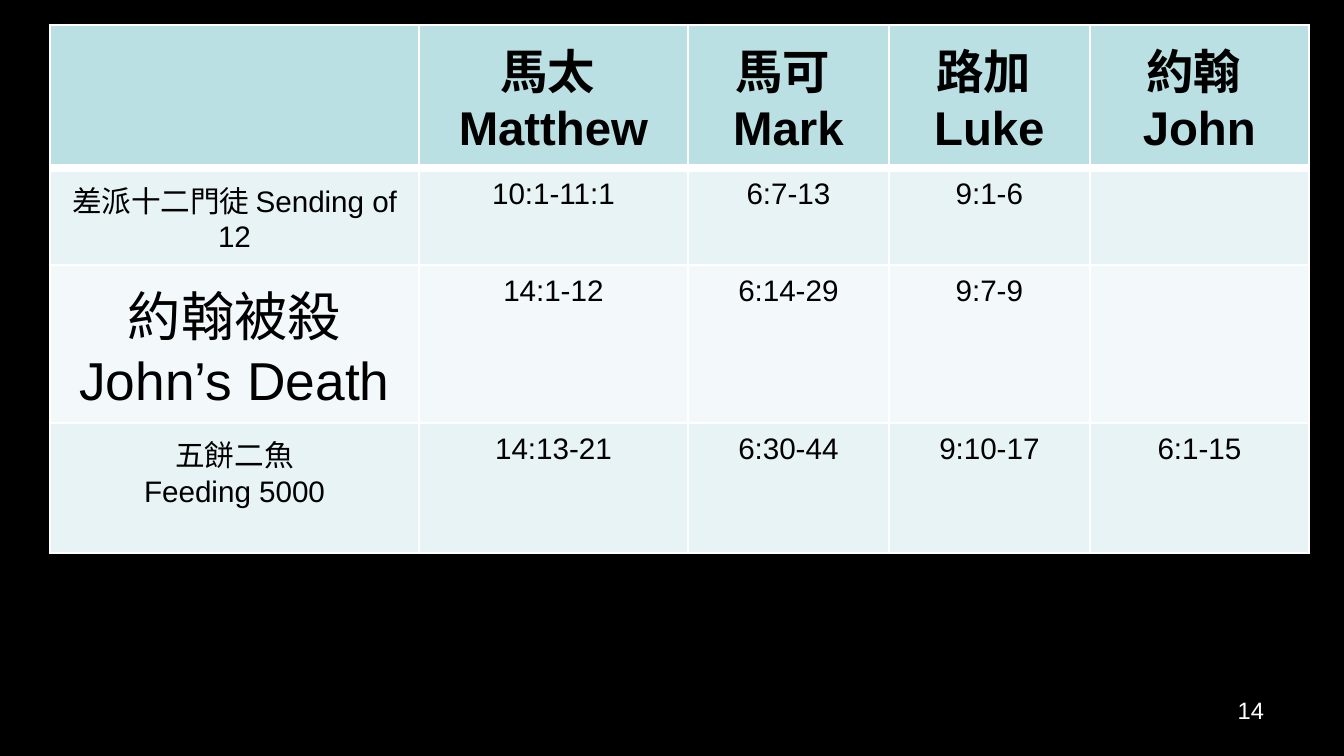
from dataclasses import dataclass

from lxml.etree import SubElement
from pptx import Presentation
from pptx.dml.color import RGBColor
from pptx.enum.text import PP_ALIGN
from pptx.oxml.ns import qn
from pptx.util import Emu, Pt

PX = 4286.25  # EMU in one px


@dataclass(frozen=True)
class Theme:
    background: str = "000000"
    header_fill: str = "BBE0E3"
    odd_fill: str = "E7F3F4"
    even_fill: str = "F3F9FA"
    rule: str = "FFFFFF"
    ink: str = "000000"
    page_ink: str = "FFFFFF"
    chinese_font: str = "Calibri"
    english_font: str = "Arial"
    header_size: int = 16
    focus_size: int = 18
    body_size: int = 10
    page_size: int = 8


THEME = Theme()

COLUMN_WIDTHS = [369, 269, 201, 201, 219]
ROW_HEIGHTS = [143, 97, 158, 130]
GOSPELS = [("馬太 ", "Matthew"), ("馬可 ", "Mark"), ("路加 ", "Luke"), ("約翰 ", "John")]
# Chinese title, English title, what joins them, type size, verses by gospel
EVENTS = [
    ("差派十二門徒 ", "Sending of 12", "run", THEME.body_size,
     ["10:1-11:1", "6:7-13", "9:1-6", ""]),
    ("約翰被殺", "John’s Death", "paragraph", THEME.focus_size,
     ["14:1-12", "6:14-29", "9:7-9", ""]),
    ("五餅二魚", "Feeding 5000", "paragraph", THEME.body_size,
     ["14:13-21", "6:30-44", "9:10-17", "6:1-15"]),
]


def px(length):
    return Emu(round(length * PX))


def rgb(colour):
    return RGBColor.from_string(colour)


def add_run(paragraph, text, font, size, colour=THEME.ink, bold=False):
    run = paragraph.add_run()
    run.text = text
    run.font.name = font
    run.font.size = Pt(size)
    run.font.bold = bold
    run.font.color.rgb = rgb(colour)


def write_bilingual(cell, chinese, english, joint, size, bold=False):
    paragraph = cell.text_frame.paragraphs[0]
    paragraph.alignment = PP_ALIGN.CENTER
    add_run(paragraph, chinese, THEME.chinese_font, size, bold=bold)
    if joint == "break":
        paragraph.add_line_break()
    elif joint == "paragraph":
        paragraph = cell.text_frame.add_paragraph()
        paragraph.alignment = PP_ALIGN.CENTER
    add_run(paragraph, english, THEME.english_font, size, bold=bold)


def style_cell(cell, fill, top_rule, bottom_rule):
    cell.margin_left = cell.margin_right = px(14)
    cell.margin_top = cell.margin_bottom = px(10)
    # Borders come before the fill in the cell properties
    properties = cell._tc.get_or_add_tcPr()
    for side, points in (("L", 1), ("R", 1), ("T", top_rule), ("B", bottom_rule)):
        border = SubElement(properties, qn(f"a:ln{side}"), w=str(Pt(points)))
        SubElement(SubElement(border, qn("a:solidFill")), qn("a:srgbClr"), val=THEME.rule)
    cell.fill.solid()
    cell.fill.fore_color.rgb = rgb(fill)


def add_gospel_table(slide, left, top):
    table = slide.shapes.add_table(
        len(ROW_HEIGHTS), len(COLUMN_WIDTHS), px(left), px(top),
        px(sum(COLUMN_WIDTHS)), px(sum(ROW_HEIGHTS))).table
    for column, width in zip(table.columns, COLUMN_WIDTHS):
        column.width = px(width)

    # Grid
    fills = [THEME.header_fill, THEME.odd_fill, THEME.even_fill, THEME.odd_fill]
    for index, (row, height, fill) in enumerate(zip(table.rows, ROW_HEIGHTS, fills)):
        row.height = px(height)
        for cell in row.cells:
            style_cell(cell, fill, 3 if index == 1 else 1, 3 if index == 0 else 1)

    # Gospel names
    for column, (chinese, english) in enumerate(GOSPELS, 1):
        write_bilingual(table.cell(0, column), chinese, english, "break",
                        THEME.header_size, bold=True)

    # Events and their verses
    for row, (chinese, english, joint, size, verses) in enumerate(EVENTS, 1):
        write_bilingual(table.cell(row, 0), chinese, english, joint, size)
        for column, verse in enumerate(verses, 1):
            if verse:
                paragraph = table.cell(row, column).text_frame.paragraphs[0]
                paragraph.alignment = PP_ALIGN.CENTER
                add_run(paragraph, verse, THEME.english_font, THEME.body_size)


def add_page_number(slide, left, top, width, height, number):
    frame = slide.shapes.add_textbox(px(left), px(top), px(width), px(height)).text_frame
    frame.word_wrap = True
    frame.margin_left = frame.margin_right = px(14)
    frame.margin_top = frame.margin_bottom = px(7)
    paragraph = frame.paragraphs[0]
    paragraph.alignment = PP_ALIGN.RIGHT
    add_run(paragraph, number, THEME.english_font, THEME.page_size, THEME.page_ink)


def main():
    presentation = Presentation()
    presentation.slide_width = px(1344)
    presentation.slide_height = px(756)
    slide = presentation.slides.add_slide(presentation.slide_layouts[6])
    slide.background.fill.solid()
    slide.background.fill.fore_color.rgb = rgb(THEME.background)
    add_page_number(slide, 964, 689, 314, 51, "14")
    add_gospel_table(slide, 50, 25)
    presentation.save("out.pptx")


if __name__ == "__main__":
    main()
